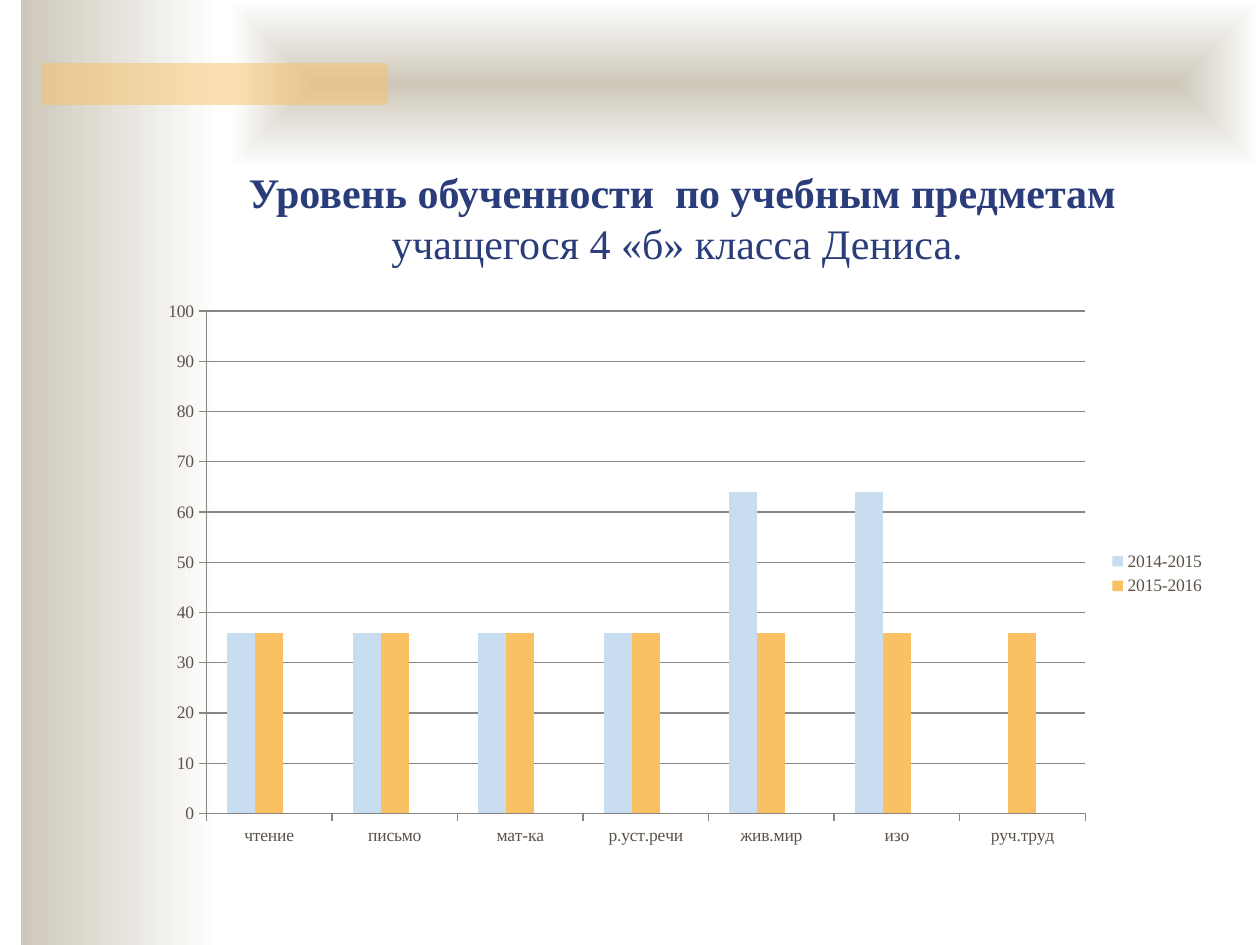
"""Build a slide with a column chart of learning levels by school subject."""
from lxml import etree
from pptx import Presentation
from pptx import util as u
from pptx.chart.data import CategoryChartData
from pptx.dml.color import RGBColor
from pptx.enum import chart as ch, shapes, text
from pptx.oxml import parse_xml
from pptx.oxml.ns import nsdecls, qn

FONT = "Times New Roman"
SAND, WHITE, AMBER, NAVY, BROWN, GRAY = "CEC8BA", "FFFFFF", "FAC164", "2A3D7A", "5B5249", "868686"
TITLE = [("Уровень обученности  по учебным предметам ", True),
         ("учащегося 4 «б» класса Дениса. ", False)]
SUBJECTS = ["чтение", "письмо", "мат-ка", "р.уст.речи", "жив.мир", "изо", "руч.труд"]
SERIES = [("2014-2015", [36, 36, 36, 36, 64, 64, None], "C9DDF1"),
          ("2015-2016", [36] * 7, AMBER),
          ("Series 3", [None] * 7, WHITE)]
HIDDEN_ENTRY = 2
SIDE_BAND = (21, 0, 199, 945)
TOP_BAND = (231, 0, 1029, 168)
ACCENT = (42, 63, 346, 42)
TITLE_BOX = (147, 116, 1071, 158)
CHART_BOX = (147, 290, 1071, 567)


def px(n):
    return u.Emu(round(n * 914400 / 126))


def color(value):
    return RGBColor.from_string(value)


def add_rect(s, box):
    sp = s.shapes.add_shape(shapes.MSO_SHAPE.RECTANGLE, *map(px, box))
    sp.shadow.inherit = False
    sp.line.fill.background()
    return sp


def add_gradient(s, box, centred=False):
    sp = add_rect(s, box)
    sp.fill.gradient()
    sp.fill.gradient_angle = 0
    for stop, value in zip(sp.fill.gradient_stops, (SAND, WHITE)):
        stop.color.rgb = color(value)
    if centred:
        lin = sp._element.spPr.find(".//" + qn("a:lin"))
        lin.getparent().replace(lin, parse_xml(
            f'<a:path {nsdecls("a")} path="shape">'
            '<a:fillToRect l="50000" t="50000" r="50000" b="50000"/></a:path>'))


def add_accent(s):
    sp = add_rect(s, ACCENT)
    sp.fill.solid()
    sp.fill.fore_color.rgb = color(AMBER)
    clr = sp._element.spPr.find(".//" + qn("a:srgbClr"))
    etree.SubElement(clr, qn("a:alpha")).set("val", "50000")


def add_title(s):
    tf = s.shapes.add_textbox(*map(px, TITLE_BOX)).text_frame
    tf.word_wrap = True
    tf.vertical_anchor = text.MSO_ANCHOR.BOTTOM
    p = tf.paragraphs[0]
    p.alignment = text.PP_ALIGN.CENTER
    for words, bold in TITLE:
        r = p.add_run()
        r.text = words
        r.font.name, r.font.size, r.font.bold = FONT, u.Pt(24), bold
        r.font.color.rgb = color(NAVY)


def add_levels_chart(s):
    data = CategoryChartData()
    data.categories = SUBJECTS
    for name, values, _ in SERIES:
        data.add_series(name, values)
    chart = s.shapes.add_chart(ch.XL_CHART_TYPE.COLUMN_CLUSTERED, *map(px, CHART_BOX), data).chart
    chart.has_title = False
    chart.font.name, chart.font.size = FONT, u.Pt(10)
    chart.font.color.rgb = color(BROWN)

    plot = chart.plots[0]
    plot.gap_width, plot.overlap, plot.vary_by_categories = 150, 0, False
    for series, (_, _, fill) in zip(plot.series, SERIES):
        series.format.fill.solid()
        series.format.fill.fore_color.rgb = color(fill)

    value_axis = chart.value_axis
    value_axis.minimum_scale, value_axis.maximum_scale, value_axis.major_unit = 0, 100, 10
    value_axis.has_major_gridlines = True
    for axis in (chart.category_axis, value_axis):
        axis.major_tick_mark = ch.XL_TICK_MARK.OUTSIDE
    for part in (chart.category_axis, value_axis, value_axis.major_gridlines):
        part.format.line.color.rgb = color(GRAY)
        part.format.line.width = u.Pt(0.75)

    chart.has_legend = True
    legend = chart.legend
    legend.position = ch.XL_LEGEND_POSITION.RIGHT
    legend.include_in_layout = False
    legend._element.find(qn("c:legendPos")).addnext(parse_xml(
        f'<c:legendEntry {nsdecls("c")}><c:idx val="{HIDDEN_ENTRY}"/>'
        '<c:delete val="1"/></c:legendEntry>'))


def main():
    prs = Presentation()
    prs.slide_width, prs.slide_height = px(1260), px(945)
    s = prs.slides.add_slide(prs.slide_layouts[6])
    add_gradient(s, SIDE_BAND)
    add_gradient(s, TOP_BAND, centred=True)
    add_accent(s)
    add_title(s)
    add_levels_chart(s)
    prs.save("out.pptx")


if __name__ == "__main__":
    main()
